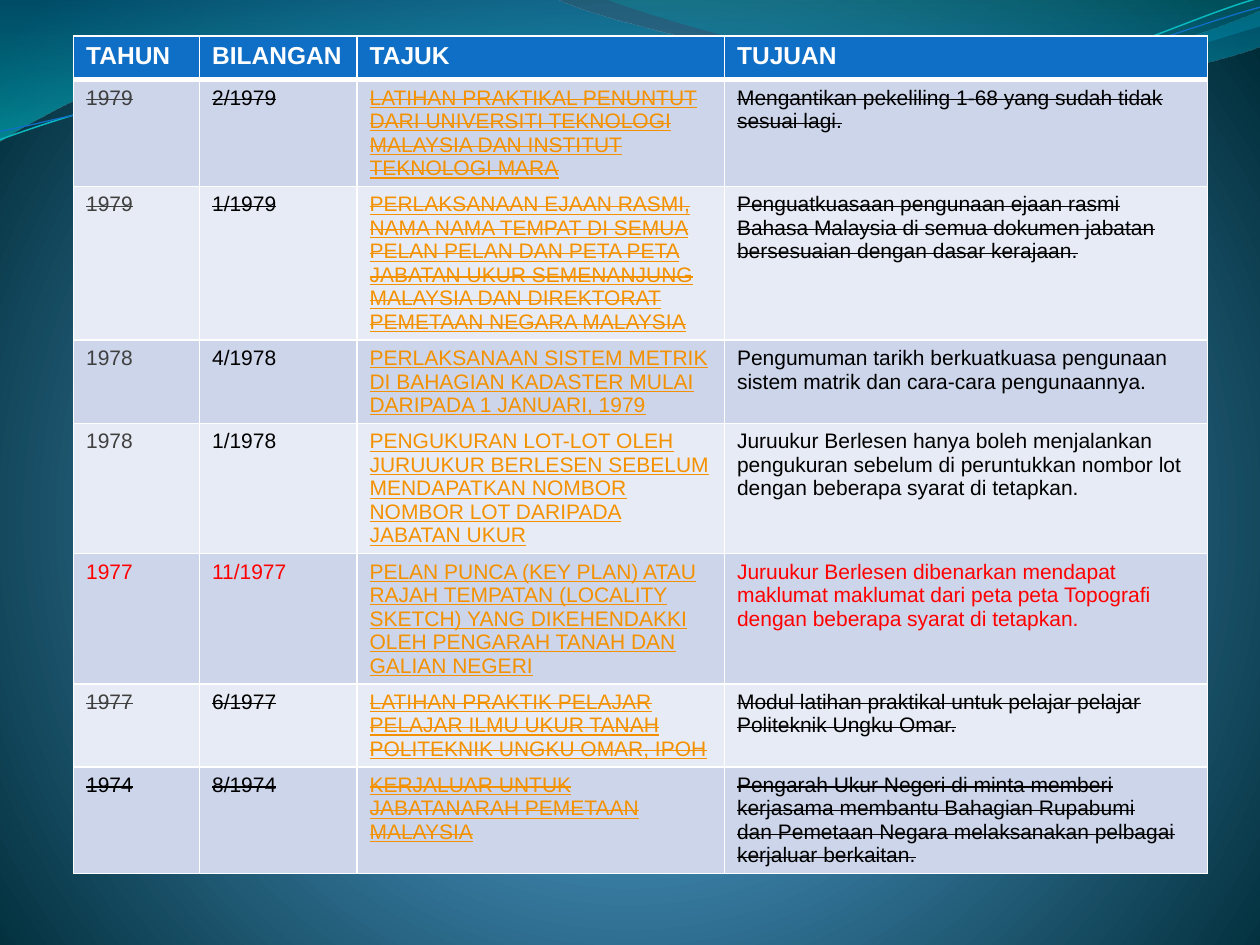
from pptx import Presentation
from pptx.dml.color import RGBColor as RGB
from pptx.oxml import parse_xml as to_xml
from pptx.oxml.ns import qn, nsdecls as decl
from pptx.util import Pt

HUES = {"head": "0F6FC6", "odd": "CCD5EA", "even": "E7EBF5", "white": "FFFFFF",
        "black": "000000", "grey": "404040", "red": "FF0000", "link": "F49100",
        "aqua": "0AB8BF", "blue": "0F6FC6"}

HEADS = ["TAHUN", "BILANGAN", "TAJUK", "TUJUAN"]
WIDTHS = [72, 90, 210, 276]
HEIGHTS = [24.9, 32.4, 54, 28.8, 28.8, 38.2, 28.8, 28.8]

# year, number, title, purpose, struck out, year colour, text colour
ROWS = [
    ("1979", "2/1979",
     "LATIHAN PRAKTIKAL PENUNTUT DARI UNIVERSITI TEKNOLOGI MALAYSIA DAN "
     "INSTITUT TEKNOLOGI MARA",
     "Mengantikan pekeliling 1-68 yang sudah tidak sesuai lagi.",
     True, "grey", "black"),
    ("1979", "1/1979",
     "PERLAKSANAAN EJAAN RASMI, NAMA NAMA TEMPAT DI SEMUA PELAN PELAN DAN "
     "PETA PETA JABATAN UKUR SEMENANJUNG MALAYSIA DAN DIREKTORAT PEMETAAN "
     "NEGARA MALAYSIA",
     "Penguatkuasaan pengunaan ejaan rasmi Bahasa Malaysia di semua dokumen "
     "jabatan bersesuaian dengan dasar kerajaan.",
     True, "grey", "black"),
    ("1978", "4/1978",
     "PERLAKSANAAN SISTEM METRIK DI BAHAGIAN KADASTER MULAI DARIPADA "
     "1 JANUARI, 1979",
     "Pengumuman tarikh berkuatkuasa pengunaan sistem matrik dan cara-cara "
     "pengunaannya.",
     False, "grey", "black"),
    ("1978", "1/1978",
     "PENGUKURAN LOT-LOT OLEH JURUUKUR BERLESEN SEBELUM MENDAPATKAN NOMBOR "
     "NOMBOR LOT DARIPADA JABATAN UKUR",
     "Juruukur Berlesen hanya boleh menjalankan pengukuran sebelum di "
     "peruntukkan nombor lot dengan beberapa syarat di tetapkan.",
     False, "grey", "black"),
    ("1977", "11/1977",
     "PELAN PUNCA (KEY PLAN) ATAU RAJAH TEMPATAN (LOCALITY SKETCH) YANG "
     "DIKEHENDAKKI OLEH PENGARAH TANAH DAN GALIAN NEGERI",
     "Juruukur Berlesen dibenarkan mendapat maklumat maklumat dari peta peta "
     "Topografi dengan beberapa syarat di tetapkan.",
     False, "red", "red"),
    ("1977", "6/1977",
     "LATIHAN PRAKTIK PELAJAR PELAJAR ILMU UKUR TANAH POLITEKNIK UNGKU OMAR, "
     "IPOH",
     "Modul latihan praktikal untuk pelajar pelajar\nPoliteknik Ungku Omar.",
     True, "grey", "black"),
    ("1974", "8/1974",
     "KERJALUAR UNTUK JABATANARAH PEMETAAN MALAYSIA",
     "Pengarah Ukur Negeri di minta memberi kerjasama membantu Bahagian "
     "Rupabumi\ndan Pemetaan Negara melaksanakan pelbagai kerjaluar berkaitan.",
     True, "black", "black"),
]

# Two numbers are a straight step, six are a Bezier curve.
BAND = [(0, 0), (317, -1), (343, 12, 478, 45, 546, 45), (614, 45, 690, 19, 720, 6),
        (721, 26), (708, 32, 626, 55, 537, 54), (447, 54, 275, 20, 185, 24),
        (93, 26, 33, 60, -1, 81), (0, 0)]
CREST = [(345, -1), (366, 8, 491, 45, 554, 47), (616, 50, 692, 23, 720, 15),
         (720, 0), (345, -1)]
WAVE = [(-2, 63), (34, 51.7, 114, 29.4, 199, 29.4),
        (283, 30.4, 426, 67.2, 512, 65.2), (600, 62.3, 676, 25.9, 721, 15.9)]
RIPPLE = [(-1.5, 58.1), (33, 53.7, 118, 32.6, 204, 32.7),
          (290, 33.7, 429, 63.3, 515, 61.4), (602, 59.4, 679, 30, 722, 21)]
TILT = 357.3
DOWN = '<a:lin ang="5400000" scaled="0"/>'
GLOW = ('<a:path path="circle"><a:fillToRect l="10000" t="110000" r="10000" '
        'b="100000"/></a:path>')


class Deck:
    def __init__(self, font="Arial"):
        self.font = font
        self.prs = Presentation()
        self.prs.slide_width, self.prs.slide_height = Pt(720), Pt(540)
        self.slide = self.prs.slides.add_slide(self.prs.slide_layouts[6])

    def hue(self, name):
        return RGB.from_string(HUES[name])

    def blend(self, fill, root, stops, way):
        """Give root a gradient of (position, hex, opacity) stops."""
        fill.solid()
        old = next(root.iter(qn("a:solidFill")))
        marks = "".join(
            f'<a:gs pos="{pos * 1000}"><a:srgbClr val="{tone}">'
            f'<a:alpha val="{alpha * 1000}"/></a:srgbClr></a:gs>'
            for pos, tone, alpha in stops)
        old.getparent().replace(old, to_xml(
            f'<a:gradFill {decl("a")} rotWithShape="1"><a:gsLst>{marks}</a:gsLst>'
            f'{way}</a:gradFill>'))

    def back(self, stops):
        self.blend(self.slide.background.fill, self.slide.element, stops, GLOW)

    def shape(self, steps, close):
        """Draw straight steps, then join each three of a curve into a Bezier."""
        dots = [(Pt(step[i]), Pt(step[i + 1]))
                for step in steps for i in range(0, len(step), 2)]
        pen = self.slide.shapes.build_freeform(*dots[0])
        pen.add_line_segments(dots[1:], close=close)
        item = pen.convert_to_shape()
        item.shadow.inherit = False
        lines = iter(list(item.element.iter(qn("a:lnTo"))))
        for step in steps[1:]:
            first = next(lines)
            if len(step) == 6:
                bend = to_xml(f'<a:cubicBezTo {decl("a")}/>')
                first.addprevious(bend)
                for line in (first, next(lines), next(lines)):
                    bend.append(line[0])
                    line.getparent().remove(line)
        return item

    def area(self, steps, stops):
        item = self.shape(steps, True)
        item.line.fill.background()
        self.blend(item.fill, item.element.spPr, stops, DOWN)

    def curve(self, steps, tone, width):
        item = self.shape(steps, False)
        item.rotation = TILT
        item.fill.background()
        item.line.color.rgb = self.hue(tone)
        item.line.width = Pt(width)

    def cell(self, cell, text, fill, tone, size=12, bold=False, struck=False,
             under=False, top=1, base=1):
        cell.text_frame.text = text
        cell.fill.solid()
        cell.fill.fore_color.rgb = self.hue(fill)
        for para in cell.text_frame.paragraphs:
            for run in para.runs:
                font = run.font
                font.name, font.size, font.bold = self.font, Pt(size), bold
                font.color.rgb, font.underline = self.hue(tone), under
                if struck:
                    run._r.get_or_add_rPr().set("strike", "sngStrike")
        edges = {"L": 1, "R": 1, "T": top, "B": base}
        for i, (side, width) in enumerate(edges.items()):
            cell._tc.get_or_add_tcPr().insert(i, to_xml(
                f'<a:ln{side} {decl("a")} w="{Pt(width)}"><a:solidFill>'
                f'<a:srgbClr val="{HUES["white"]}"/></a:solidFill></a:ln{side}>'))

    def table(self, left, top, tall):
        frame = self.slide.shapes.add_table(
            len(HEIGHTS), len(WIDTHS), Pt(left), Pt(top), Pt(sum(WIDTHS)), Pt(tall))
        grid = frame.table
        for col, width in zip(grid.columns, WIDTHS):
            col.width = Pt(width)
        for row, height in zip(grid.rows, HEIGHTS):
            row.height = Pt(height)
        frame.height = Pt(tall)
        for c, text in enumerate(HEADS):
            self.cell(grid.cell(0, c), text, "head", "white", 14, True, base=3)
        for r, (*texts, struck, year, tone) in enumerate(ROWS, 1):
            fill = "odd" if r % 2 else "even"
            for c, (text, ink) in enumerate(zip(texts, (year, tone, "link", tone))):
                self.cell(grid.cell(r, c), text, fill, ink, struck=struck,
                          under=c == 2, top=3 if r == 1 else 1)


def main():
    deck = Deck()
    deck.back([(0, "4AA0D6", 100), (25, "4C98C7", 100), (100, "002C38", 100)])
    deck.area(BAND, [(0, "0074A1", 45), (100, "00C6CF", 55)])
    deck.area(CREST, [(0, "00A1A9", 30), (80, "008BBF", 45)])
    deck.curve(WAVE, "aqua", 0.85)
    deck.curve(RIPPLE, "blue", 0.75)
    deck.table(42, 20.7, 507.6)
    deck.prs.save("out.pptx")


if __name__ == "__main__":
    main()
